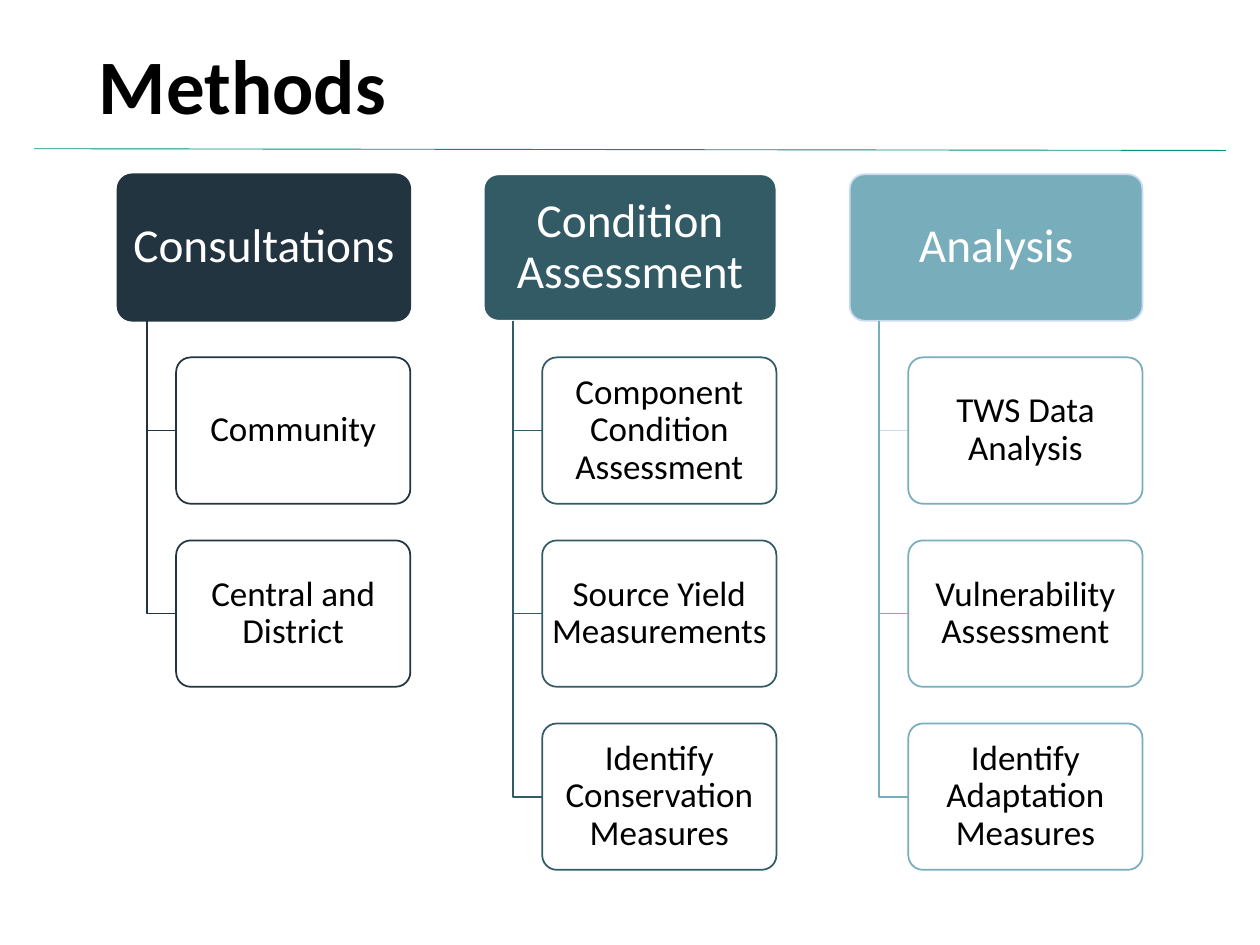
"""Build the Methods slide: three method groups, each with its steps below."""
from dataclasses import dataclass

from lxml import etree
from pptx import Presentation
from pptx.dml.color import RGBColor
from pptx.enum import shapes, text
from pptx.oxml.ns import qn
from pptx.util import Pt

FONT = "Calibri"
BLACK = RGBColor(0x00, 0x00, 0x00)
WHITE = RGBColor(0xFF, 0xFF, 0xFF)
TEAL = RGBColor(0x00, 0x8E, 0x83)
NAVY = RGBColor(0x23, 0x34, 0x41)
SLATE = RGBColor(0x33, 0x5B, 0x66)
SKY = RGBColor(0x78, 0xAD, 0xBB)
PALE = RGBColor(0xCB, 0xDB, 0xEF)

LEFT, TOP = 67.2, 99.6
GROUP_PITCH, ROW_PITCH = 209.2, 104.6
HEAD_WIDTH, BOX_HEIGHT = 167.3, 83.65
STEP_INDENT = HEAD_WIDTH / 5
STEP_WIDTH = HEAD_WIDTH - STEP_INDENT


@dataclass(frozen=True)
class Group:
    heading: str
    steps: tuple[str, ...]
    color: RGBColor
    border: RGBColor
    first_branch: RGBColor


@dataclass(frozen=True)
class BoxStyle:
    width: float
    size: float
    inset_x: float
    inset_y: float
    fill: RGBColor
    border: RGBColor
    ink: RGBColor


GROUPS = (
    Group("Consultations", ("Community", "Central and District"), NAVY, NAVY, NAVY),
    Group(
        "Condition Assessment",
        ("Component Condition Assessment", "Source Yield Measurements",
         "Identify Conservation Measures"),
        SLATE, WHITE, SLATE,
    ),
    Group(
        "Analysis",
        ("TWS Data Analysis", "Vulnerability Assessment", "Identify Adaptation Measures"),
        SKY, PALE, PALE,
    ),
)


def write(frame, wording: str, size: float, ink: RGBColor, bold: bool = False):
    frame.word_wrap = True
    frame.vertical_anchor = text.MSO_ANCHOR.MIDDLE
    frame.text = wording
    paragraph = frame.paragraphs[0]
    paragraph.line_spacing = 0.9
    font = paragraph.runs[0].font
    font.name, font.size, font.bold = FONT, Pt(size), bold
    font.color.rgb = ink
    return paragraph


def add_title(slide, wording: str) -> None:
    title = slide.shapes.add_textbox(Pt(49.5), Pt(23), Pt(621), Pt(56))
    write(title.text_frame, wording, 44, BLACK, bold=True)


def add_rule(slide) -> None:
    rule = slide.shapes.add_connector(
        shapes.MSO_CONNECTOR.STRAIGHT, Pt(19.5), Pt(85), Pt(700.5), Pt(86))
    rule.line.color.rgb = TEAL
    rule.line.width = Pt(0.5)
    etree.SubElement(rule._element.spPr, qn("a:effectLst"))


def add_box(slide, wording: str, left: float, top: float, style: BoxStyle) -> None:
    box = slide.shapes.add_shape(
        shapes.MSO_SHAPE.ROUNDED_RECTANGLE,
        Pt(left), Pt(top), Pt(style.width), Pt(BOX_HEIGHT))
    box.adjustments[0] = 0.1
    box.shadow.inherit = False
    box.fill.solid()
    box.fill.fore_color.rgb = style.fill
    box.line.color.rgb = style.border
    box.line.width = Pt(1)
    frame = box.text_frame
    frame.margin_left = frame.margin_right = Pt(style.inset_x)
    frame.margin_top = frame.margin_bottom = Pt(style.inset_y)
    paragraph = write(frame, wording, style.size, style.ink)
    paragraph.alignment = text.PP_ALIGN.CENTER


def add_branch(slide, left: float, step_top: float, color: RGBColor) -> None:
    trunk, middle = left + STEP_INDENT / 2, step_top + BOX_HEIGHT / 2
    builder = slide.shapes.build_freeform(Pt(trunk), Pt(TOP + BOX_HEIGHT))
    builder.add_line_segments(
        [(Pt(trunk), Pt(middle)), (Pt(left + STEP_INDENT), Pt(middle))], close=False)
    branch = builder.convert_to_shape()
    branch.shadow.inherit = False
    branch.fill.background()
    branch.line.color.rgb = color
    branch.line.width = Pt(1)


def add_group(slide, group: Group, left: float) -> None:
    head_style = BoxStyle(HEAD_WIDTH, 27, 4.05, 2.7, group.color, group.border, WHITE)
    step_style = BoxStyle(STEP_WIDTH, 20, 3, 2, WHITE, group.color, BLACK)
    add_box(slide, group.heading, left, TOP, head_style)
    for row, step in enumerate(group.steps, start=1):
        step_top = TOP + row * ROW_PITCH
        add_branch(slide, left, step_top, group.first_branch if row == 1 else group.color)
        add_box(slide, step, left + STEP_INDENT, step_top, step_style)


def main() -> None:
    deck = Presentation()
    deck.slide_width, deck.slide_height = Pt(720), Pt(540)
    slide = deck.slides.add_slide(deck.slide_layouts[6])
    add_rule(slide)
    add_title(slide, "Methods")
    for column, group in enumerate(GROUPS):
        add_group(slide, group, LEFT + column * GROUP_PITCH)
    deck.save("out.pptx")


if __name__ == "__main__":
    main()
